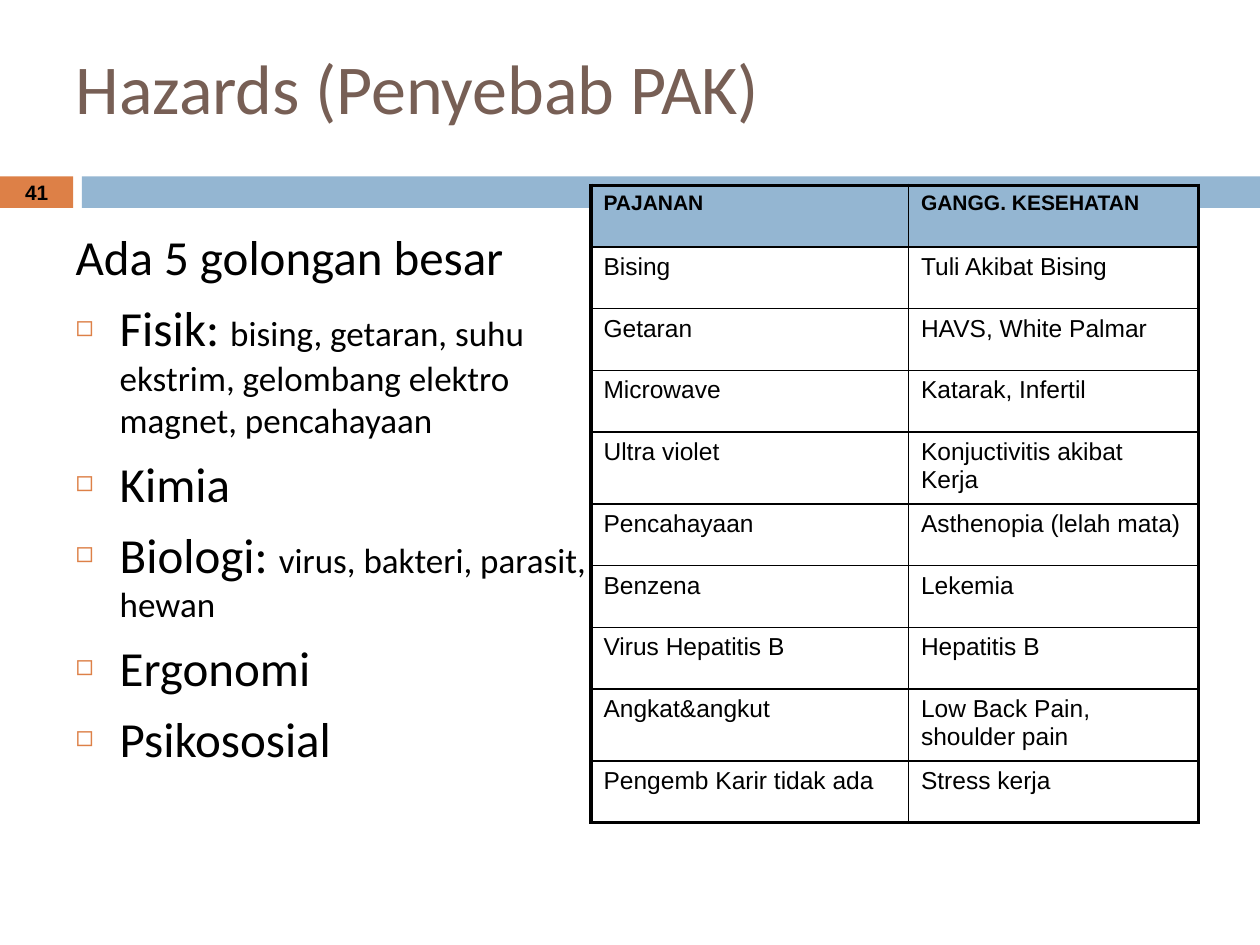
from lxml.etree import SubElement
from pptx import Presentation
from pptx.dml.color import RGBColor
from pptx.enum.shapes import MSO_SHAPE
from pptx.enum.text import MSO_ANCHOR, MSO_AUTO_SIZE, PP_ALIGN
from pptx.oxml import parse_xml
from pptx.oxml.ns import nsdecls, qn
from pptx.util import Inches, Pt

COLORS = {"orange": "DD8047", "blue": "94B6D2", "brown": "775F55", "black": "000000"}
HAZARDS = [
    ("Fisik: ", "bising, getaran, suhu ekstrim, gelombang elektro magnet, pencahayaan"),
    ("Kimia", ""),
    ("Biologi: ", "virus, bakteri, parasit, hewan"),
    ("Ergonomi", ""),
    ("Psikososial", ""),
]
EXPOSURES = [
    ("PAJANAN", "GANGG. KESEHATAN"),
    ("Bising", "Tuli Akibat Bising"),
    ("Getaran", "HAVS, White Palmar"),
    ("Microwave", "Katarak, Infertil"),
    ("Ultra violet", "Konjuctivitis akibat Kerja"),
    ("Pencahayaan", "Asthenopia (lelah mata)"),
    ("Benzena", "Lekemia"),
    ("Virus Hepatitis B", "Hepatitis B"),
    ("Angkat&angkut", "Low Back Pain, shoulder pain"),
    ("Pengemb Karir tidak ada", "Stress kerja"),
]
TALL_ROWS = (4, 8)


def rgb(name):
    """Return the named palette colour."""
    return RGBColor.from_string(COLORS[name])


def style_run(run, size, font="Calibri", color="black", bold=False):
    """Format one run of text."""
    run.font.size = Pt(size)
    run.font.name = font
    run.font.bold = bold
    run.font.color.rgb = rgb(color)


def place(shape, box):
    """Move a shape to a box of left, top, width and height in inches."""
    shape.left, shape.top, shape.width, shape.height = map(Inches, box)


def add_title(slide, box):
    """Fill and format the title placeholder."""
    title = slide.shapes.title
    place(title, box)
    frame = title.text_frame
    frame.text = "Hazards (Penyebab PAK)"
    frame.auto_size = MSO_AUTO_SIZE.NONE
    frame.vertical_anchor = MSO_ANCHOR.MIDDLE
    frame.paragraphs[0].alignment = PP_ALIGN.LEFT
    style_run(frame.paragraphs[0].runs[0], 40, color="brown")


def add_band(slide, box, number):
    """Draw the two-part band with the slide number in its left part."""
    left, top, width, height = box
    number_width, gap = 0.58, 0.07
    bar_left = left + number_width + gap
    parts = [("orange", left, number_width), ("blue", bar_left, left + width - bar_left)]
    for color, part_left, part_width in parts:
        bar = slide.shapes.add_shape(
            MSO_SHAPE.RECTANGLE, *map(Inches, (part_left, top, part_width, height)))
        bar.shadow.inherit = False
        bar.fill.solid()
        bar.fill.fore_color.rgb = rgb(color)
        bar.line.fill.background()
        if color == "orange":
            frame = bar.text_frame
            frame.margin_top = frame.margin_bottom = 0
            frame.vertical_anchor = MSO_ANCHOR.MIDDLE
            frame.text = number
            frame.paragraphs[0].alignment = PP_ALIGN.CENTER
            style_run(frame.paragraphs[0].runs[0], 11.9, "Arial", bold=True)


def format_list_paragraph(paragraph, bulleted):
    """Set the hanging indent, spacing and bullet of a list paragraph."""
    paragraph.space_before = Pt(7)
    properties = paragraph._p.get_or_add_pPr()
    properties.set("marL", str(Inches(0.35)))
    properties.set("indent", str(-Inches(0.35)))
    if not bulleted:
        SubElement(properties, qn("a:buNone"))
        return
    bullet_color = SubElement(properties, qn("a:buClr"))
    SubElement(bullet_color, qn("a:srgbClr"), val=COLORS["orange"])
    SubElement(properties, qn("a:buSzPct"), val="60000")
    SubElement(properties, qn("a:buChar"), char="◻")


def add_hazard_list(slide, box):
    """Fill the body placeholder with the hazard groups."""
    body = slide.placeholders[1]
    place(body, box)
    frame = body.text_frame
    frame.auto_size = MSO_AUTO_SIZE.NONE
    frame.text = "Ada 5 golongan besar"
    format_list_paragraph(frame.paragraphs[0], False)
    style_run(frame.paragraphs[0].runs[0], 28)
    for group, examples in HAZARDS:
        paragraph = frame.add_paragraph()
        format_list_paragraph(paragraph, True)
        for text, size in ((group, 28), (examples, 20)):
            if text:
                run = paragraph.add_run()
                run.text = text
                style_run(run, size)


def set_borders(cell, outer_sides):
    """Draw thick borders on the outer sides of a cell and thin ones elsewhere."""
    properties = cell._tc.get_or_add_tcPr()
    for index, side in enumerate("LRTB"):
        width = Pt(2.25 if side in outer_sides else 1)
        properties.insert(index, parse_xml(
            f'<a:ln{side} {nsdecls("a")} w="{width}"><a:solidFill>'
            f'<a:srgbClr val="{COLORS["black"]}"/></a:solidFill></a:ln{side}>'))


def add_exposure_table(slide, box):
    """Build the table of exposures and health effects."""
    last_row = len(EXPOSURES) - 1
    frame = slide.shapes.add_table(len(EXPOSURES), 2, *map(Inches, box))
    table = frame.table
    table.first_row = table.horz_banding = False
    table.columns[0].width = Inches(2.52)
    table.columns[1].width = Inches(box[2] - 2.52)
    for row, texts in enumerate(EXPOSURES):
        table.rows[row].height = Inches(0.57 if row in TALL_ROWS else 0.49)
        for column, text in enumerate(texts):
            cell = table.cell(row, column)
            cell.text = text
            paragraph = cell.text_frame.paragraphs[0]
            spacing = SubElement(paragraph._p.get_or_add_pPr(), qn("a:spcBef"))
            SubElement(spacing, qn("a:spcPct"), val="20000")
            header = row == 0
            style_run(paragraph.runs[0], 12 if header else 14, "Arial", bold=header)
            if header:
                cell.fill.solid()
                cell.fill.fore_color.rgb = rgb("blue")
            else:
                cell.fill.background()
            outer_sides = "LR"[column] + {0: "T", last_row: "B"}.get(row, "")
            set_borders(cell, outer_sides)


def main():
    """Build the slide and save it."""
    presentation = Presentation()
    presentation.slide_width, presentation.slide_height = Inches(10), Inches(7.5)
    slide = presentation.slides.add_slide(presentation.slide_layouts[1])
    add_band(slide, (0, 1.4, 10, 0.25), "41")
    add_title(slide, (0.5, 0.3, 9, 0.77))
    add_hazard_list(slide, (0.5, 1.75, 4.42, 4.95))
    add_exposure_table(slide, (4.69, 1.47, 4.82, 5.06))
    presentation.save("out.pptx")


if __name__ == "__main__":
    main()
